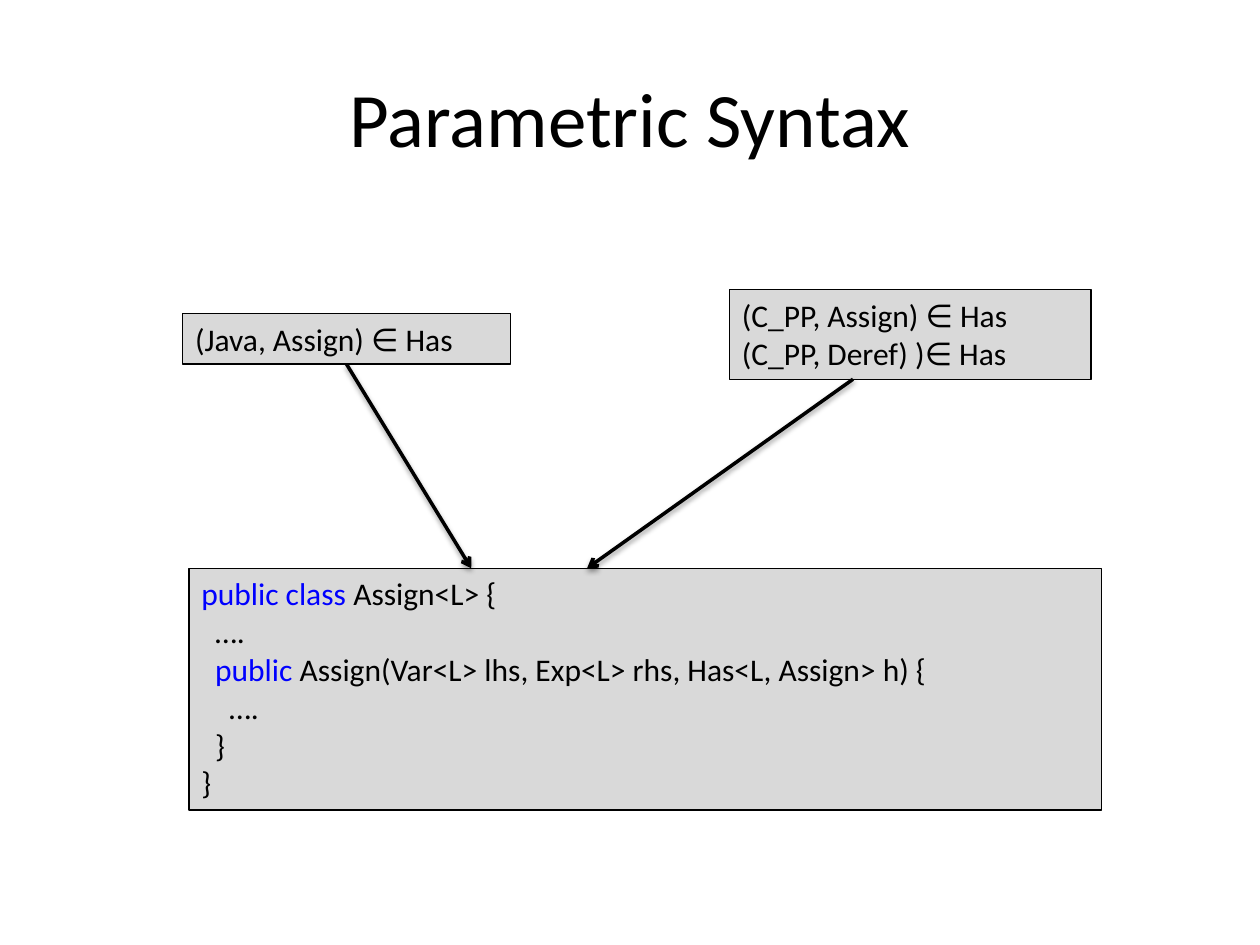
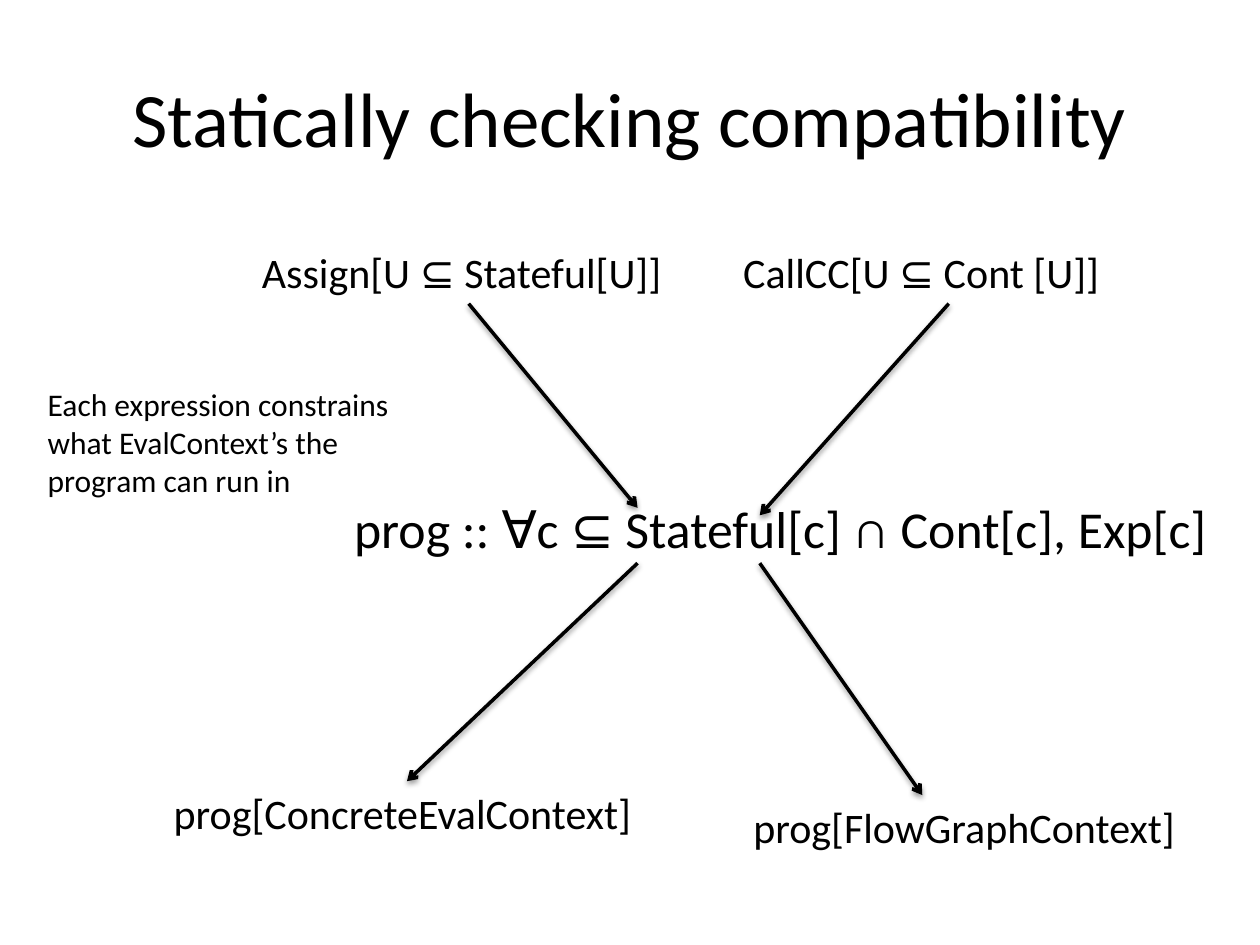
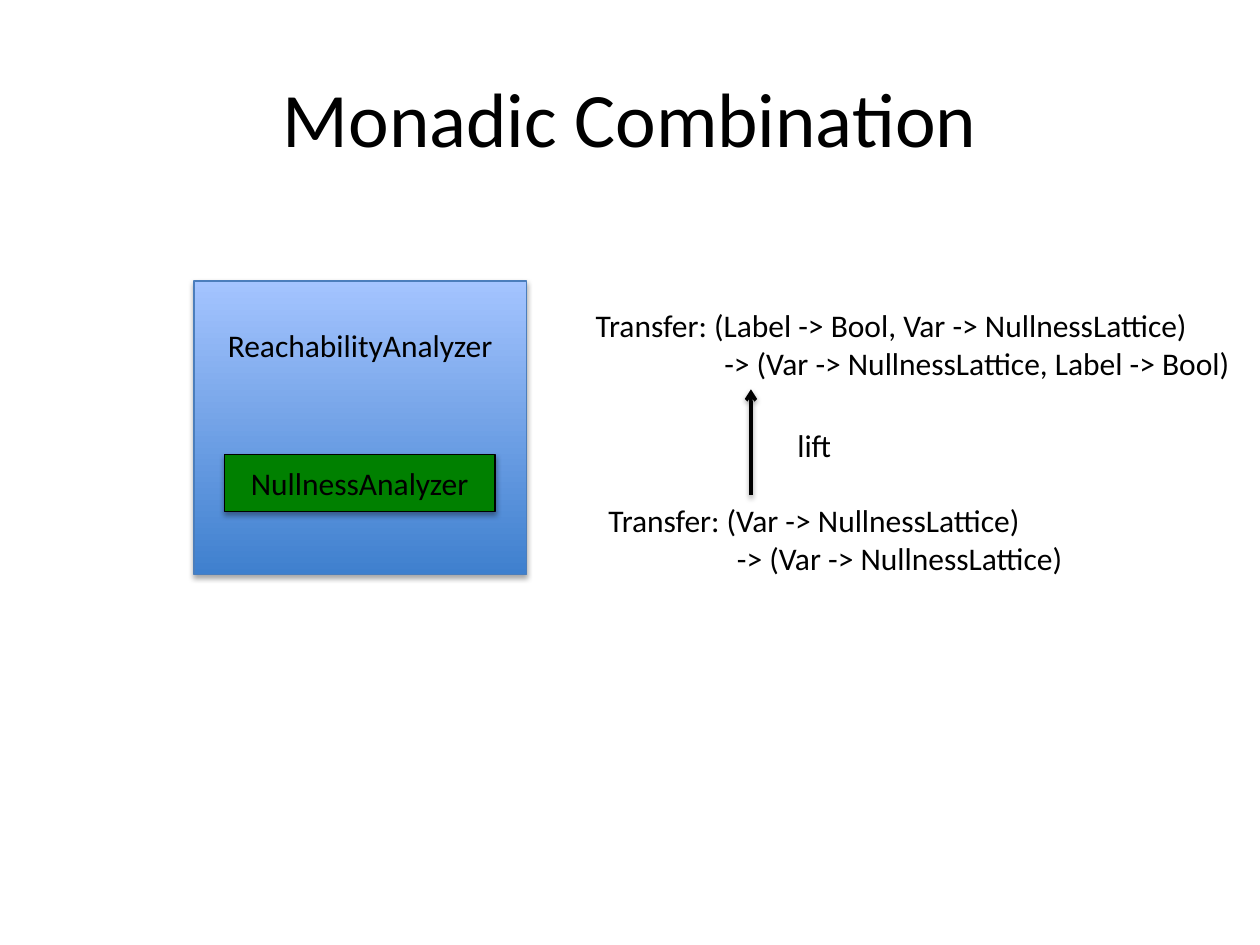
from lxml.etree import SubElement
from pptx import Presentation
from pptx.dml.color import RGBColor
from pptx.enum.shapes import MSO_CONNECTOR, MSO_SHAPE
from pptx.enum.text import MSO_ANCHOR, MSO_AUTO_SIZE, PP_ALIGN
from pptx.oxml.ns import qn
from pptx.util import Inches, Pt

FONT = "Calibri"
BLACK, GREY, GREEN, KEYWORD = "000000", "D9D9D9", "008000", "0000FF"
BLUE_DARK, BLUE_LIGHT, BLUE_LINE = "3F80CE", "A4C4FF", "4B7EBC"
TITLE_ONLY, TITLE_AND_BODY = 5, 1
CODE_INDENT = 0.11
SIGNATURE_INDENT = 1.02


def rgb(color):
    return RGBColor.from_string(color)


def box(at):
    return [Inches(v) for v in at]


def set_shadow(shape, alpha=None, dist=0):
    """Give the shape a soft shadow below it, or none without alpha."""
    effects = SubElement(shape._element.spPr, qn("a:effectLst"))
    if alpha:
        shadow = SubElement(effects, qn("a:outerShdw"), blurRad=str(Pt(3.1)),
                            dist=str(Pt(dist)), dir="5400000", rotWithShape="0")
        color = SubElement(shadow, qn("a:srgbClr"), val=BLACK)
        SubElement(color, qn("a:alpha"), val=str(alpha * 1000))


class Deck:
    def __init__(self):
        self.prs = Presentation()
        self.prs.slide_width, self.prs.slide_height = Inches(10), Inches(7.5)
        self.s = None

    def slide(self, title, layout=TITLE_ONLY):
        self.s = self.prs.slides.add_slide(self.prs.slide_layouts[layout])
        self.place(self.s.shapes.title, (0.5, 0.3, 9, 1.25))
        self.add_text(self.s.shapes.title.text_frame, [title], 44,
                      PP_ALIGN.CENTER, MSO_ANCHOR.MIDDLE)

    def place(self, shape, at):
        shape.left, shape.top, shape.width, shape.height = box(at)

    def add_text(self, tf, lines, size=18, align=PP_ALIGN.LEFT, anchor=MSO_ANCHOR.TOP):
        """A line is a string, or (indent, run, ...) where a run is a string or (text, color)."""
        tf.vertical_anchor = anchor
        for i, line in enumerate(lines):
            p = tf.add_paragraph() if i else tf.paragraphs[0]
            p.alignment = align
            indent, *runs = (0, line) if isinstance(line, str) else line
            if indent:
                p._p.get_or_add_pPr().set("marL", str(Inches(indent)))
            for run in runs:
                text, color = (run, BLACK) if isinstance(run, str) else run
                r = p.add_run()
                r.text = text
                r.font.name, r.font.size = FONT, Pt(size)
                r.font.color.rgb = rgb(color)

    def body(self, at, line, size):
        """Fill the body placeholder with one line without a bullet."""
        sp = self.s.placeholders[1]
        self.place(sp, at)
        sp.text_frame.auto_size = MSO_AUTO_SIZE.NONE
        self.add_text(sp.text_frame, [line], size)
        pPr = sp.text_frame.paragraphs[0]._p.get_or_add_pPr()
        pPr.set("marL", "0")
        pPr.set("indent", "0")
        SubElement(pPr, qn("a:buNone"))

    def label(self, at, lines, size=18, wrap=False):
        tf = self.s.shapes.add_textbox(*box(at)).text_frame
        tf.word_wrap = wrap
        tf.auto_size = MSO_AUTO_SIZE.SHAPE_TO_FIT_TEXT
        self.add_text(tf, lines, size)

    def rect(self, at, fill, line=BLACK, raised=False):
        """A fill is one color, or a pair (bottom, top) for a gradient."""
        sp = self.s.shapes.add_shape(MSO_SHAPE.RECTANGLE, *box(at))
        if isinstance(fill, str):
            sp.fill.solid()
            sp.fill.fore_color.rgb = rgb(fill)
        else:
            sp.fill.gradient()
            sp.fill.gradient_angle = 90
            for stop, color in zip(sp.fill.gradient_stops, fill):
                stop.color.rgb = rgb(color)
        sp.line.color.rgb = rgb(line)
        sp.line.width = Pt(0.75)
        set_shadow(sp, 35 if raised else None, 1.8)
        return sp

    def code(self, at, lines):
        tf = self.rect(at, GREY).text_frame
        tf.word_wrap = True
        self.add_text(tf, lines)

    def arrow(self, start, end):
        c = self.s.shapes.add_connector(MSO_CONNECTOR.STRAIGHT, *box(start + end))
        c.line.color.rgb = rgb(BLACK)
        c.line.width = Pt(2)
        SubElement(c.line._get_or_add_ln(), qn("a:tailEnd"), type="arrow")
        set_shadow(c, 38, 1.6)


def parametric_syntax(d):
    d.slide("Parametric Syntax")
    d.code((1.5, 4.51, 7.24, 1.92), [
        (0, ("public class ", KEYWORD), "Assign<L> {"),
        (CODE_INDENT, "…."),
        (CODE_INDENT, ("public ", KEYWORD),
         "Assign(Var<L> lhs, Exp<L> rhs, Has<L, Assign> h) {"),
        (2 * CODE_INDENT, "…."),
        (CODE_INDENT, "}"),
        "}"])
    d.code((1.45, 2.49, 2.6, 0.4), ["(Java, Assign) ∈ Has"])
    d.code((5.79, 2.3, 2.87, 0.71), ["(C_PP, Assign) ∈ Has", "(C_PP, Deref) )∈ Has"])
    d.arrow((2.75, 2.89), (3.74, 4.51))
    d.arrow((6.77, 3.01), (4.66, 4.51))


def checking_compatibility(d):
    d.slide("Statically checking compatibility", TITLE_AND_BODY)
    d.body((2.71, 3.89, 7.35, 1), "prog :: ∀c ⊆ Stateful[c] ∩ Cont[c], Exp[c]", 29.6)
    d.label((1.98, 1.91, 3.47, 0.5), ["Assign[U ⊆ Stateful[U]]"], 24)
    d.label((5.8, 1.91, 4.25, 0.5), ["CallCC[U ⊆ Cont [U]]"], 24, wrap=True)
    d.label((0.28, 3.01, 2.96, 1.01), ["Each expression constrains",
                                       "what EvalContext’s the",
                                       "program can run in"])
    d.label((1.28, 6.2, 3.91, 0.5), ["prog[ConcreteEvalContext]"], 24)
    d.label((5.88, 6.31, 3.61, 0.5), ["prog[FlowGraphContext]"], 24)
    d.arrow((3.72, 2.41), (5.06, 4.03))
    d.arrow((7.53, 2.41), (6.03, 4.09))
    d.arrow((5.06, 4.47), (3.23, 6.2))
    d.arrow((6.03, 4.47), (7.32, 6.31))


def monadic_combination(d):
    d.slide("Monadic Combination")
    d.rect((1.54, 2.23, 2.64, 2.33), (BLUE_DARK, BLUE_LIGHT), BLUE_LINE, raised=True)
    nullness = d.rect((1.78, 3.61, 2.15, 0.45), GREEN, raised=True)
    d.add_text(nullness.text_frame, ["NullnessAnalyzer"], align=PP_ALIGN.CENTER,
               anchor=MSO_ANCHOR.MIDDLE)
    d.label((1.71, 2.54, 2.34, 0.4), ["ReachabilityAnalyzer"])
    d.label((4.63, 2.38, 5.3, 0.71), [
        "Transfer: (Label -> Bool, Var -> NullnessLattice)",
        (SIGNATURE_INDENT, "-> (Var -> NullnessLattice, Label -> Bool)")])
    d.label((4.73, 3.93, 3.85, 0.71), [
        "Transfer: (Var -> NullnessLattice)",
        (SIGNATURE_INDENT, "-> (Var -> NullnessLattice)")])
    d.arrow((5.96, 3.93), (5.96, 3.09))
    d.label((6.23, 3.33, 0.47, 0.4), ["lift"])


def main():
    d = Deck()
    parametric_syntax(d)
    checking_compatibility(d)
    monadic_combination(d)
    d.prs.save("out.pptx")


if __name__ == "__main__":
    main()
